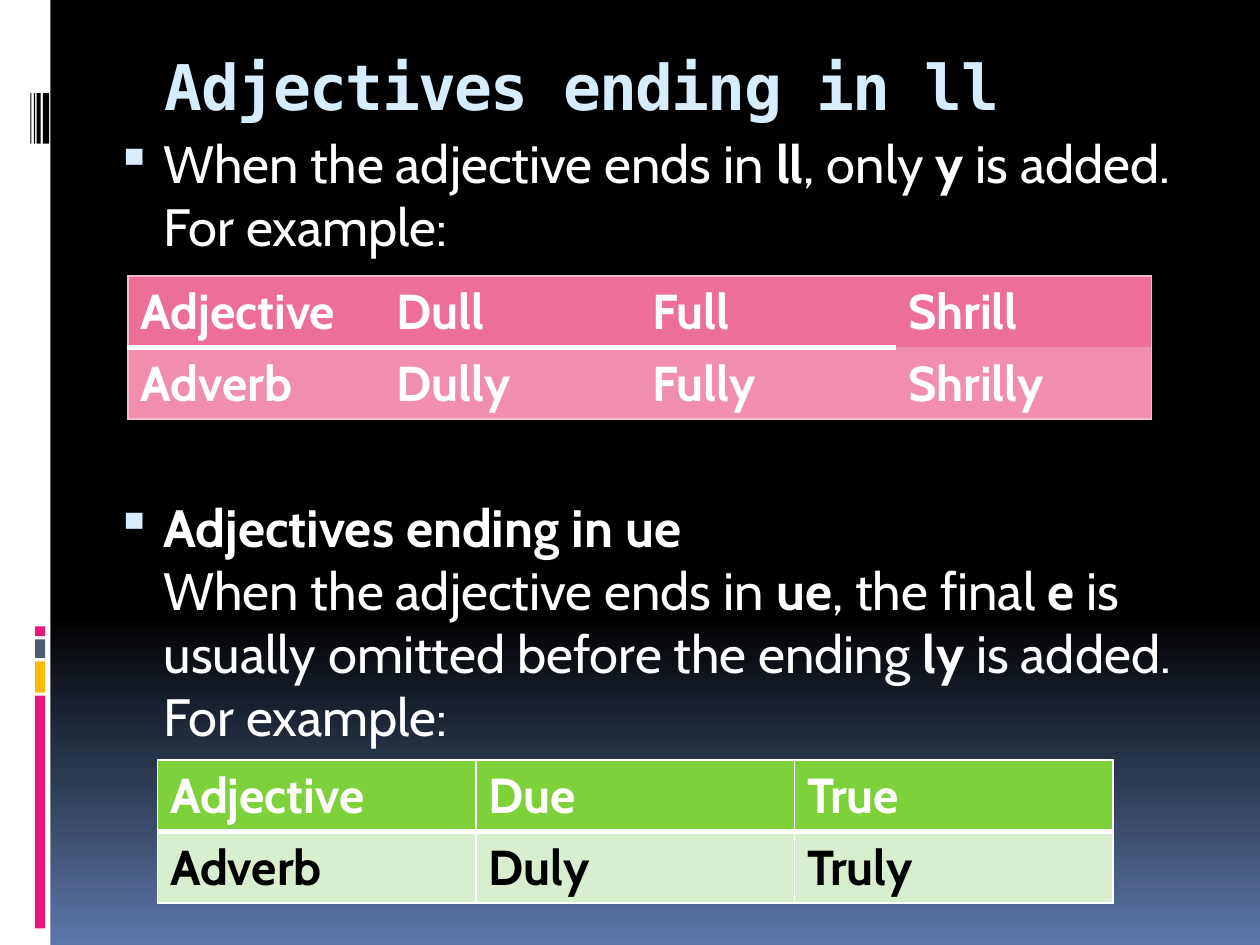
from lxml import etree
from pptx import Presentation
from pptx.dml.color import RGBColor
from pptx.enum import shapes, text
from pptx.oxml.ns import qn
from pptx.util import Pt

WHITE = RGBColor(0xFF, 0xFF, 0xFF)
BLACK = RGBColor(0, 0, 0)
BLUE = RGBColor(0x5B, 0x77, 0xA8)
PALE_BLUE = RGBColor(0xD6, 0xEC, 0xFF)
MAGENTA = RGBColor(0xEA, 0x15, 0x7A)
AMBER = RGBColor(0xFE, 0xB8, 0x0A)
SLATE = RGBColor(0x4E, 0x5B, 0x6F)
PINK = RGBColor(0xED, 0x6F, 0x98)
LIGHT_PINK = RGBColor(0xF1, 0x8D, 0xAD)
PINK_EDGE = RGBColor(0xF5, 0xBD, 0xCB)
GREEN = RGBColor(0x7F, 0xD1, 0x3B)
LIGHT_GREEN = RGBColor(0xD8, 0xEE, 0xCE)

BODY_FONT = "Cabin"
TITLE_FONT = "DejaVu Sans Mono"
NO_STYLE = "{2D5ABB26-0587-4C30-8999-92F81FD0307C}"


def set_font(p, name, size, color, bold=None):
    f = p.font
    f.name, f.size, f.bold = name, Pt(size), bold
    f.color.rgb = color


def set_background(s):
    fill = s.background.fill
    fill.gradient()
    fill.gradient_angle = 270
    for stop, position, color in zip(fill.gradient_stops, (0.65, 1), (BLACK, BLUE)):
        stop.position = position
        stop.color.rgb = color


def add_rect(s, left, top, width, height, color):
    sp = s.shapes.add_shape(shapes.MSO_SHAPE.RECTANGLE,
                            Pt(left), Pt(top), Pt(width), Pt(height))
    sp.shadow.inherit = False
    sp.fill.solid()
    sp.fill.fore_color.rgb = color
    sp.line.fill.background()


def add_side_strip(s):
    add_rect(s, 0, 0, 28.8, 540, WHITE)
    for top, height, color in ((397.5, 133, MAGENTA), (378, 17.8, AMBER),
                               (365.3, 10.7, SLATE), (358, 5.5, MAGENTA)):
        add_rect(s, 20, top, 5.8, height, color)
    for left, width in ((24.5, 3.6), (21, 2.2), (19.4, 0.7), (17.4, 0.6)):
        add_rect(s, left, 53.3, width, 28.8, BLACK)


def set_title(s, words):
    sp = s.shapes.title
    sp.left, sp.top, sp.width, sp.height = Pt(25.2), Pt(20.9), Pt(612), Pt(72)
    tf = sp.text_frame
    tf.auto_size = text.MSO_AUTO_SIZE.NONE
    tf.vertical_anchor = text.MSO_ANCHOR.TOP
    tf.margin_left, tf.margin_top = Pt(69), Pt(6)
    p = tf.paragraphs[0]
    p.text = words
    p.alignment = text.PP_ALIGN.LEFT
    set_font(p, TITLE_FONT, 36, PALE_BLUE, True)
    p.runs[0]._r.get_or_add_rPr().set("spc", "-100")


def set_bullet(p):
    pPr = p._p.get_or_add_pPr()
    pPr.set("marL", str(Pt(32.4)))
    pPr.set("indent", str(Pt(-27.4)))
    color = etree.Element(qn("a:buClr"))
    etree.SubElement(color, qn("a:srgbClr"), val=str(PALE_BLUE))
    size = etree.Element(qn("a:buSzPct"), val="95000")
    char = etree.Element(qn("a:buChar"), char="▪")
    # Bullet settings stand between the spacing and the default run settings.
    for element in (color, size, char):
        pPr.find(qn("a:defRPr")).addprevious(element)


def add_bullet(p, parts, space_before):
    """Fill p with parts that alternate between plain and bold."""
    set_font(p, BODY_FONT, 30, WHITE)
    p.space_before = Pt(space_before)
    set_bullet(p)
    for i, part in enumerate(parts):
        if part == "\n":
            p.add_line_break()
        elif part:
            r = p.add_run()
            r.text = part
            r.font.bold = i % 2 == 1


def add_body(s):
    sp = s.shapes.add_textbox(Pt(54), Pt(71.3), Pt(648), Pt(414.7))
    tf = sp.text_frame
    tf.word_wrap = True
    add_bullet(tf.paragraphs[0],
               ("When the adjective ends in ", "ll", ", only ", "y",
                " is added. For example:"), 7)
    add_bullet(tf.add_paragraph(),
               ("", "Adjectives ending in ue", "\n", "",
                "When the adjective ends in ", "ue", ", the final ", "e",
                " is usually omitted before the ending ", "ly",
                " is added. For example:"), 136)


def set_borders(cell, borders):
    """Draw borders, given as side letter: (colour, width)."""
    tcPr = cell._tc.get_or_add_tcPr()
    for side in "LRTB":
        if side in borders:
            color, width = borders[side]
            ln = etree.SubElement(tcPr, qn("a:ln" + side), w=str(Pt(width)))
            fill = etree.SubElement(ln, qn("a:solidFill"))
            etree.SubElement(fill, qn("a:srgbClr"), val=str(color))


def add_word_table(s, left, top, width, rows, fills, colors, borders_at):
    n = len(rows[0])
    gf = s.shapes.add_table(len(rows), n, Pt(left), Pt(top), Pt(width), Pt(81.4))
    table = gf.table
    table.first_row = table.horz_banding = False
    table._tbl.tblPr.find(qn("a:tableStyleId")).text = NO_STYLE
    for i, row in enumerate(rows):
        for j, word in enumerate(row):
            cell = table.cell(i, j)
            set_borders(cell, borders_at(i, j))
            cell.fill.solid()
            cell.fill.fore_color.rgb = fills[i]
            p = cell.text_frame.paragraphs[0]
            p.text = word
            set_font(p, BODY_FONT, 28, colors[i], True)


def pink_borders(i, j):
    edge, rule = (PINK_EDGE, 0.94), (WHITE, 3)
    borders = {"B": edge} if i else {"T": edge}
    if j < 3:
        borders["T" if i else "B"] = rule
    if j in (0, 3):
        borders["R" if j else "L"] = edge
    return borders


def green_borders(i, j):
    borders = dict.fromkeys("LRTB", (WHITE, 1))
    borders["T" if i else "B"] = (WHITE, 3)
    return borders


def main():
    prs = Presentation()
    prs.slide_width, prs.slide_height = Pt(720), Pt(540)
    s = prs.slides.add_slide(prs.slide_layouts[5])
    set_background(s)
    add_side_strip(s)
    set_title(s, "Adjectives ending in ll")
    add_body(s)
    add_word_table(s, 73.2, 157.7, 585, (("Adjective", "Dull", "Full", "Shrill"),
                                         ("Adverb", "Dully", "Fully", "Shrilly")),
                   (PINK, LIGHT_PINK), (WHITE, WHITE), pink_borders)
    add_word_table(s, 90, 434.4, 546, (("Adjective", "Due", "True"),
                                       ("Adverb", "Duly", "Truly")),
                   (GREEN, LIGHT_GREEN), (WHITE, BLACK), green_borders)
    prs.save("out.pptx")


if __name__ == "__main__":
    main()
